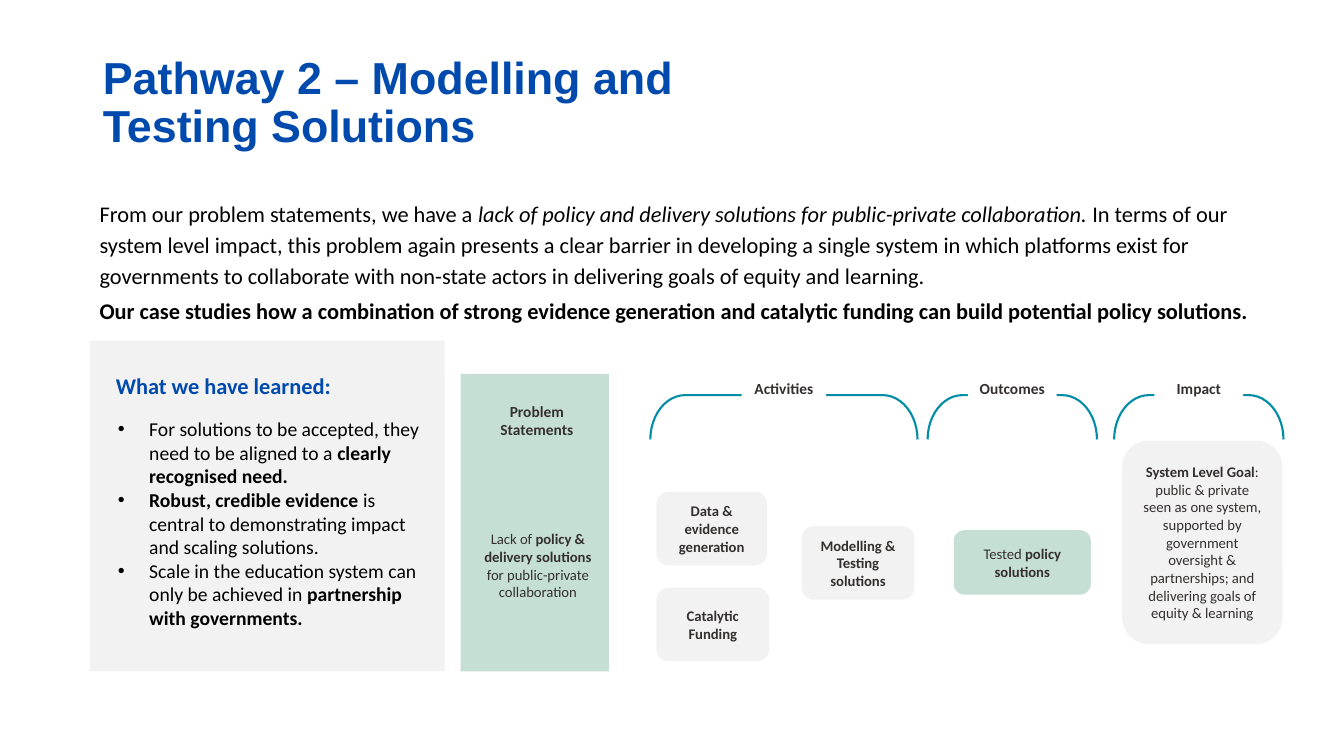
from dataclasses import dataclass

from pptx import Presentation
from pptx.dml.color import RGBColor
from pptx.enum.shapes import MSO_SHAPE
from pptx.enum.text import MSO_ANCHOR, MSO_AUTO_SIZE, PP_ALIGN
from pptx.util import Inches, Pt

BLUE = RGBColor(0x00, 0x4A, 0xAD)
TEAL = RGBColor(0x00, 0x8D, 0xA5)
GREEN = RGBColor(0xC6, 0xDF, 0xD4)
GREY = RGBColor(0xF2, 0xF2, 0xF2)
CHARCOAL = RGBColor(0x34, 0x30, 0x2F)
BLACK = RGBColor(0x00, 0x00, 0x00)
WHITE = RGBColor(0xFF, 0xFF, 0xFF)
CELL = Inches(0.1)


@dataclass
class Box:
    left: float
    top: float
    width: float
    height: float

    def inside(self, left, top, width, height):
        return Box(self.left + left, self.top + top, width, height)

    def lengths(self):
        return [round(cells * CELL) for cells in (self.left, self.top, self.width, self.height)]


def write(para, text, size=10.5, color=CHARCOAL, font="Calibri", emphasis="bold",
          align=PP_ALIGN.LEFT, line=1.0, before=0, after=0):
    para.alignment = align
    para.line_spacing = line
    para.space_before, para.space_after = Pt(before), Pt(after)
    for index, piece in enumerate(text.split("|")):
        if piece:
            span = para.add_run()
            span.text = piece
            span.font.size, span.font.name = Pt(size), font
            span.font.color.rgb = color
            span.font.bold = index % 2 == 1 and emphasis == "bold"
            span.font.italic = index % 2 == 1 and emphasis == "italic"


def add_text(page, box):
    frame = page.shapes.add_textbox(*box.lengths()).text_frame
    frame.word_wrap = True
    return frame


def add_block(page, box, text="", fill=None, preset=MSO_SHAPE.ROUNDED_RECTANGLE,
              anchor=MSO_ANCHOR.MIDDLE, size=10.5):
    block = page.shapes.add_shape(preset, *box.lengths())
    block.shadow.inherit = False
    block.line.fill.background()
    if fill is None:
        block.fill.background()
    else:
        block.fill.solid()
        block.fill.fore_color.rgb = fill
    block.text_frame.vertical_anchor = anchor
    if text:
        write(block.text_frame.paragraphs[0], text, size=size, align=PP_ALIGN.CENTER)
    return block


def place(holder, box, anchor):
    holder.left, holder.top, holder.width, holder.height = box.lengths()
    frame = holder.text_frame
    frame.word_wrap = True
    frame.auto_size = MSO_AUTO_SIZE.NONE
    frame.vertical_anchor = anchor
    return frame


def add_title(page, box):
    frame = place(page.shapes.title, box, MSO_ANCHOR.MIDDLE)
    write(frame.paragraphs[0], "|Pathway 2 – Modelling and Testing Solutions|",
          size=32, color=BLUE, font="Arial", line=0.9)


def add_introduction(page, box):
    frame = add_text(page, box)
    write(frame.paragraphs[0],
          "From our problem statements, we have a |lack of policy and delivery solutions for "
          "public-private collaboration. |In terms of our system level impact, this problem again "
          "presents a clear barrier in developing a single system in which platforms exist for "
          "governments to collaborate with non-state actors in delivering goals of equity and learning.",
          size=16, color=BLACK, emphasis="italic", line=1.15, before=6, after=6)
    write(frame.add_paragraph(),
          "|Our case studies how a combination of strong evidence generation and catalytic funding "
          "can build potential policy solutions.|", size=16, color=BLACK)


def add_lessons(page, box):
    body = page.placeholders[1]
    panel = add_block(page, box, fill=GREY, preset=MSO_SHAPE.RECTANGLE)
    body.element.addprevious(panel.element)
    heading = add_text(page, box.inside(1.6, 2.6, 24.2, 3.7))
    write(heading.paragraphs[0], "|What we have learned:|", size=16, color=BLUE)
    frame = place(body, box.inside(1.8, 7.1, 32, 22.2), MSO_ANCHOR.TOP)
    lessons = [
        "For solutions to be accepted, they need to be aligned to a |clearly recognised need.|",
        "|Robust, credible evidence |is central to demonstrating impact and scaling solutions.",
        "Scale in the education system can only be achieved in |partnership with governments.|",
    ]
    for index, lesson in enumerate(lessons):
        para = frame.add_paragraph() if index else frame.paragraphs[0]
        write(para, lesson, size=14, color=BLACK)
        properties = para._p.get_or_add_pPr()
        properties.set("marL", str(Inches(0.31)))
        properties.set("indent", str(-Inches(0.31)))


def add_stage(page, box, name, label_width):
    middle_left = box.left + box.width / 2
    middle_top = box.top + box.height / 2
    upright = Box(middle_left - box.height / 2, middle_top - box.width / 2, box.height, box.width)
    bracket = page.shapes.add_shape(MSO_SHAPE.RIGHT_BRACKET, *upright.lengths())
    bracket.rotation = 270
    bracket.adjustments[0] = 0.785
    bracket.shadow.inherit = False
    bracket.fill.background()
    bracket.line.color.rgb = TEAL
    bracket.line.width = Pt(1.5)
    label = Box(middle_left - label_width / 2, box.top - 2.1, label_width, 3.3)
    add_block(page, label, f"|{name}|", WHITE, MSO_SHAPE.RECTANGLE, MSO_ANCHOR.TOP, 11)


def add_pathway(page, box):
    add_block(page, box.inside(0, 0, 14.7, box.height), fill=GREEN, preset=MSO_SHAPE.RECTANGLE)
    heading = add_text(page, box.inside(0.5, 2.3, 14.1, 5.4))
    write(heading.paragraphs[0], "|Problem Statements|", size=11, align=PP_ALIGN.CENTER)
    steps = [
        ((0.2, 14.5, 14.9, 9), None,
         "Lack of |policy & delivery solutions| for public-private collaboration"),
        ((19.4, 11.7, 11, 7.3), GREY, "|Data & evidence generation|"),
        ((19.4, 21.2, 11.2, 7.3), GREY, "|Catalytic Funding|"),
        ((33.8, 15.1, 11.2, 7.3), GREY, "|Modelling & Testing solutions|"),
        ((48.9, 15.5, 13.6, 6.4), GREEN, "Tested |policy solutions|"),
        ((65.6, 6.6, 15.9, 20.2), GREY,
         "|System Level Goal|: public & private seen as one system, supported by government "
         "oversight & partnerships; and delivering goals of equity & learning"),
    ]
    for cells, fill, text in steps:
        add_block(page, box.inside(*cells), text, fill)
    stages = [("Activities", 18.8, 26.5, 8.4), ("Outcomes", 46.3, 16.8, 8.8), ("Impact", 64.8, 16.8, 8.8)]
    for name, left, width, label_width in stages:
        add_stage(page, box.inside(left, 2.1, width, 4.4), name, label_width)


def main():
    deck = Presentation()
    deck.slide_width, deck.slide_height = Inches(13.33), Inches(7.5)
    page = deck.slides.add_slide(deck.slide_layouts[1])
    add_title(page, Box(9.2, 4, 67.9, 12.6))
    add_introduction(page, Box(8.9, 19, 118.4, 13.8))
    add_lessons(page, Box(8.9, 33.8, 35.2, 32.8))
    add_pathway(page, Box(45.7, 37.1, 82.1, 29.5))
    deck.save("out.pptx")


if __name__ == "__main__":
    main()
